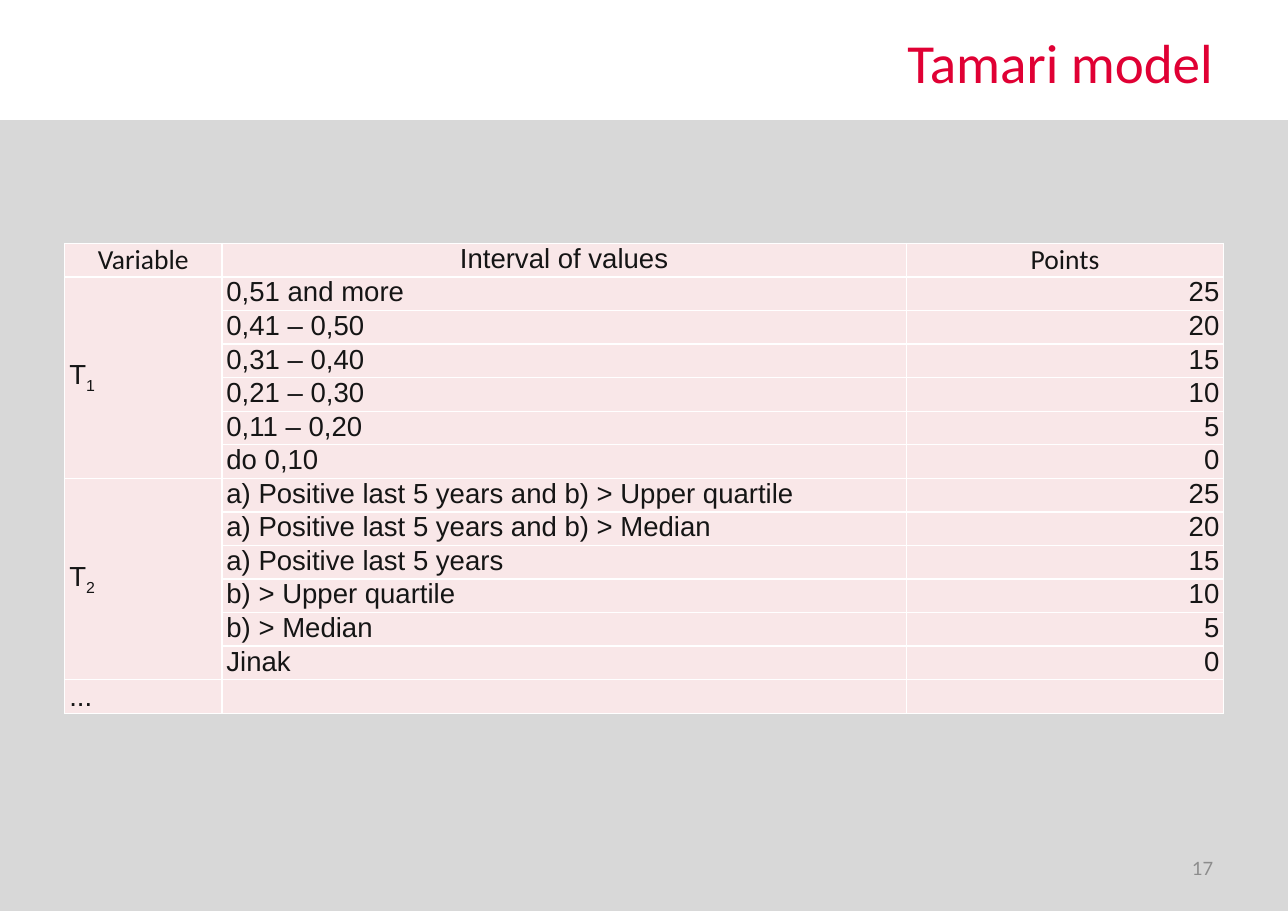
from lxml import etree
from pptx import Presentation
from pptx import util as u
from pptx.dml import color
from pptx.enum import shapes, text
from pptx.oxml import ns

Pt = u.Pt
Side = text.PP_ALIGN
MID = text.MSO_ANCHOR.MIDDLE


def rgb(code):
    return color.RGBColor.from_string(code)


def style(para, side, face, size, code):
    para.alignment = side
    for run in para.runs:
        run.font.name = face
        run.font.size = Pt(size)
        run.font.color.rgb = rgb(code)


deck = Presentation()
deck.slide_width, deck.slide_height = Pt(841.68), Pt(595.44)
slide = deck.slides.add_slide(deck.slide_layouts[5])

# Grey area below the title
band = slide.shapes.add_shape(
    shapes.MSO_SHAPE.RECTANGLE, 0, Pt(78.5), Pt(841.68), Pt(516.94))
band.shadow.inherit = False
band.fill.solid()
band.fill.fore_color.rgb = rgb("D8D8D8")
band.line.fill.background()

# Title
title = slide.shapes.title
title.left, title.top = Pt(215.3), Pt(14.4)
title.width, title.height = Pt(584.6), Pt(51.8)
title.text_frame.text = "Tamari model"
title.text_frame.vertical_anchor = MID
style(title.text_frame.paragraphs[0], Side.RIGHT, "Calibri", 36, "E00034")

# Table content: each variable with its intervals, best first
groups = [
    ("1", ["0,51 and more", "0,41 – 0,50", "0,31 – 0,40",
           "0,21 – 0,30", "0,11 – 0,20", "do 0,10"]),
    ("2", ["a) Positive last 5 years and b) > Upper quartile",
           "a) Positive last 5 years and b) > Median",
           "a) Positive last 5 years", "b) > Upper quartile",
           "b) > Median", "Jinak"]),
]
rows = [("Variable", "Interval of values", "Points")]
for sub, spans in groups:
    for i, span in enumerate(spans):
        rows.append(("" if i else "T", span, str(25 - 5 * i)))
rows.append(("...", "", ""))

# Table grid
high = 21.96
frame = slide.shapes.add_table(
    len(rows), 3, Pt(42.3), Pt(159), Pt(757.5), Pt(high * len(rows)))
table = frame.table
table.first_row = table.horz_banding = False
for col, wide in zip(table.columns, (102.7, 447.2, 207.6)):
    col.width = Pt(wide)
for row in table.rows:
    row.height = Pt(high)

# Cells: text, borders and fill
for r, row in enumerate(rows):
    for c, word in enumerate(row):
        cell = table.cell(r, c)
        cell.margin_left = cell.margin_right = Pt(3)
        cell.margin_top = cell.margin_bottom = 0
        if r and c == 0:
            cell.vertical_anchor = MID
        props = cell._tc.get_or_add_tcPr()
        for edge in ("a:lnL", "a:lnR", "a:lnT", "a:lnB"):
            line = etree.SubElement(props, ns.qn(edge), w=str(Pt(1)))
            fill = etree.SubElement(line, ns.qn("a:solidFill"))
            etree.SubElement(fill, ns.qn("a:srgbClr"), val="FFFFFF")
        cell.fill.solid()
        cell.fill.fore_color.rgb = rgb("F9E7E8")
        if word:
            cell.text_frame.text = word
            para = cell.text_frame.paragraphs[0]
            para.space_after = Pt(3)
            side = Side.CENTER if r == 0 else Side.RIGHT if c == 2 else Side.JUSTIFY
            face = "Calibri" if r == 0 and c != 1 else "Arial"
            style(para, side, face, 18, "151515")

# Merged variable cells with subscripts
top = 1
for sub, spans in groups:
    cell = table.cell(top, 0)
    para = cell.text_frame.paragraphs[0]
    run = para.add_run()
    run.text = sub
    style(para, Side.JUSTIFY, "Arial", 18, "151515")
    run._r.get_or_add_rPr().set("baseline", "-25000")
    cell.merge(table.cell(top + len(spans) - 1, 0))
    top += len(spans)

# Slide number
box = slide.shapes.add_textbox(Pt(603.4), Pt(551.5), Pt(196.6), Pt(31.7))
box.text_frame.word_wrap = True
box.text_frame.vertical_anchor = MID
box.text_frame.text = "17"
style(box.text_frame.paragraphs[0], Side.RIGHT, "Lato", 12, "8C8C8C")

deck.save("out.pptx")
